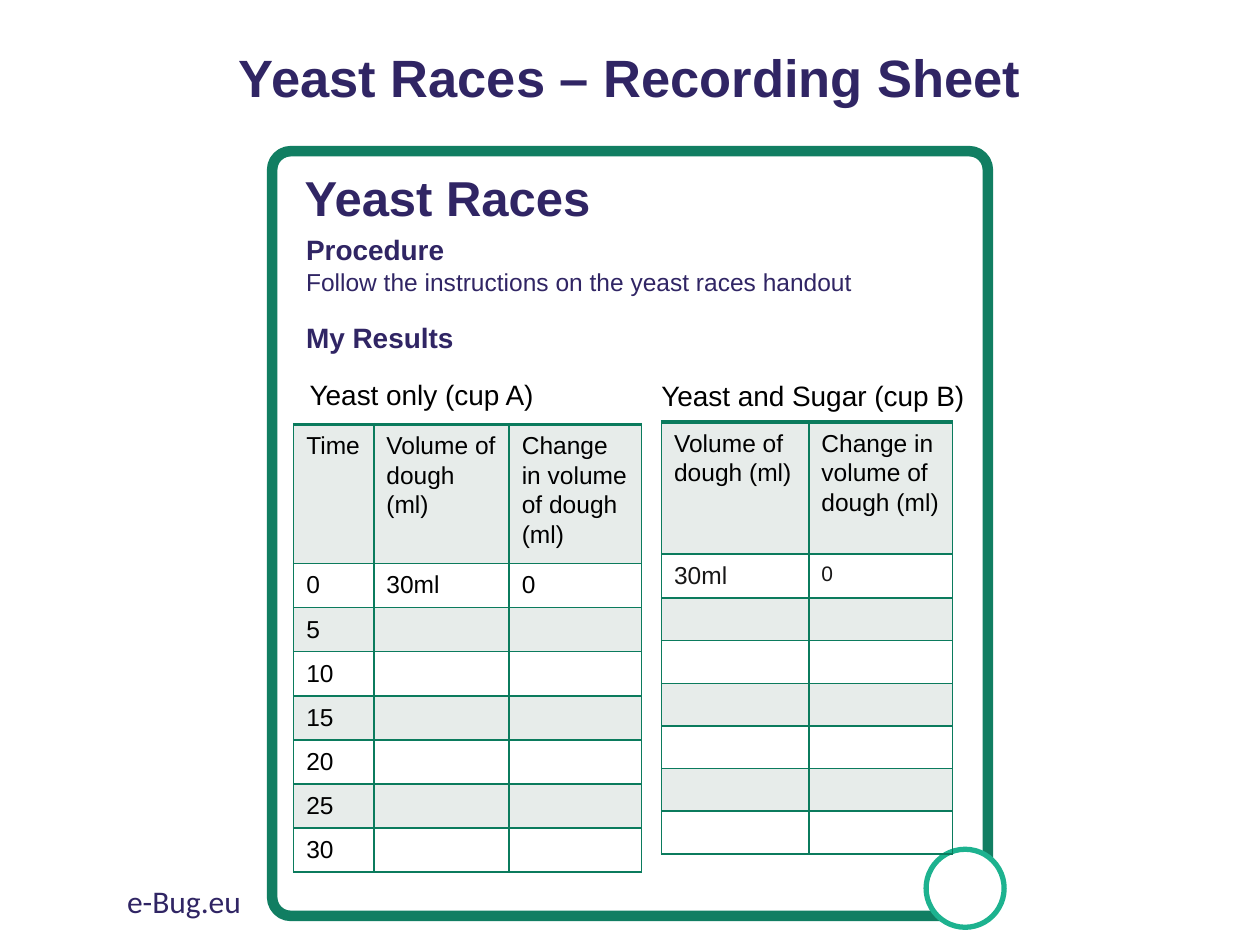
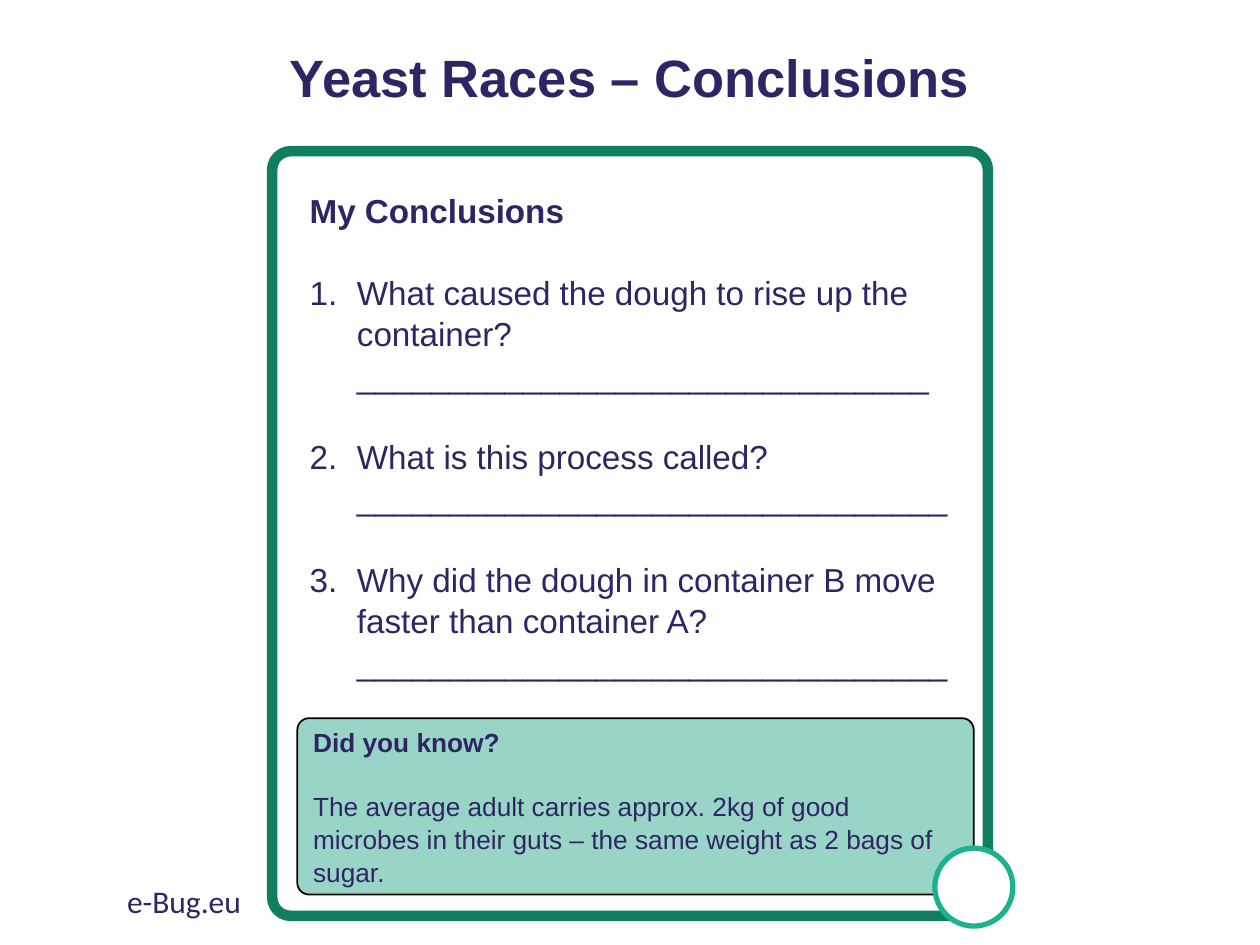
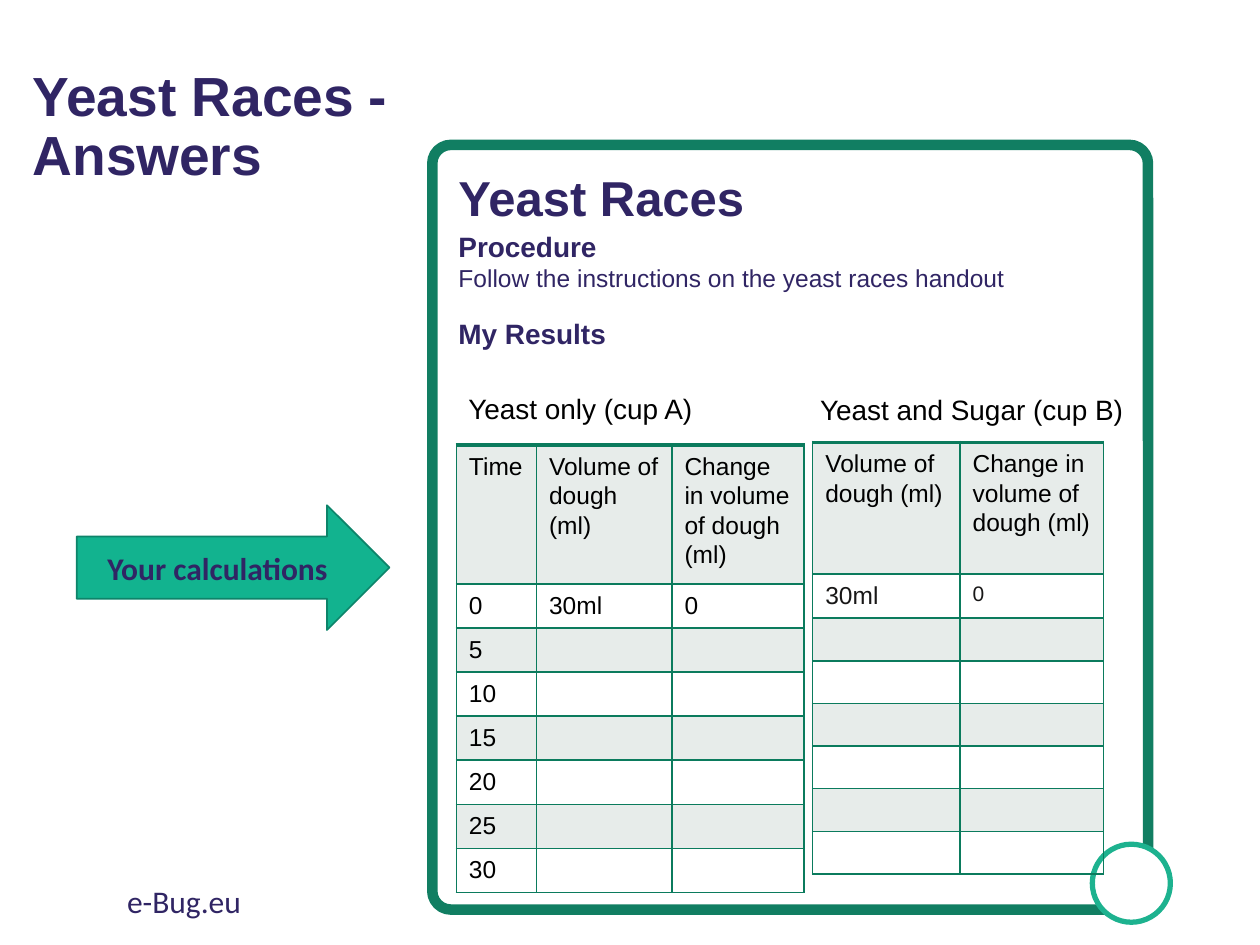
from copy import deepcopy

from lxml import etree
from pptx import Presentation
from pptx.dml.color import RGBColor
from pptx.enum.shapes import MSO_SHAPE as Preset
from pptx.enum.text import MSO_ANCHOR as Anchor, MSO_AUTO_SIZE as AutoSize, PP_ALIGN as Align
from pptx.oxml.ns import qn
from pptx.util import Pt

COLORS = {
    "ink": "302564", "black": "000000", "soft_black": "181717", "white": "FFFFFF",
    "frame": "117E62", "ring": "1DB28F", "grid": "0B7B5D", "band": "E7ECEA",
    "fact": "99D5C7", "arrow": "12B38F", "arrow_edge": "0D846A",
}

# Text styles: font values, then the colour name
STYLES = {
    "title": ({"name": "Arial", "size": Pt(30), "bold": True}, "ink"),
    "answer_title": ({"name": "Arial", "size": Pt(31.5), "bold": True}, "ink"),
    "heading": ({"name": "Arial", "size": Pt(28), "bold": True}, "ink"),
    "subheading": ({"name": "Arial", "size": Pt(16), "bold": True}, "ink"),
    "body": ({"name": "Arial", "size": Pt(14), "bold": False}, "ink"),
    "label": ({"name": "Arial", "size": Pt(16), "bold": False}, "black"),
    "cell": ({"name": "Arial", "size": Pt(14), "bold": False}, "black"),
    "soft_cell": ({"name": "Arial", "size": Pt(14), "bold": False}, "soft_black"),
    "small_cell": ({"name": "Arial", "size": Pt(12), "bold": False}, "soft_black"),
    "question_head": ({"name": "Arial", "size": Pt(19), "bold": True}, "ink"),
    "question": ({"name": "Arial", "size": Pt(19), "bold": False}, "ink"),
    "fact_head": ({"name": "Arial", "size": Pt(15), "bold": True}, "ink"),
    "fact": ({"name": "Arial", "size": Pt(15), "bold": False}, "ink"),
    "footer": ({"name": "Calibri", "size": Pt(18), "bold": False}, "ink"),
    "arrow": ({"name": "Calibri", "size": Pt(18), "bold": True}, "ink"),
}

TITLE_BOX = (23, 0, 674, 92)
CONTENT_LEFT, CONTENT_WIDTH = 169.9, 386.6

# Places of the parts of the two recording sheets
RECORDING = {
    "frame": (155.5, 86.4), "ring": (529.2, 485.3),
    "heading": (167, 92.2), "procedure": (167.8, 129.6),
    "label_a": (169.9, 211), "table_a": (167.8, 242.6),
    "label_b": (370.8, 211.7), "table_b": (378, 241.2),
}
ANSWERS = {
    "frame": (247, 82.8), "ring": (624.2, 482.4),
    "heading": (254.9, 92.2), "procedure": (254.9, 127.4),
    "label_a": (260.6, 218.9), "table_a": (260.8, 254.2),
    "label_b": (461.5, 219.6), "table_b": (464.4, 252.7),
}

VOLUME, CHANGE = "Volume of dough (ml)", "Change in volume of dough (ml)"
YEAST_ROWS = [["Time", VOLUME, CHANGE], ["0", "30ml", "0"]]
YEAST_ROWS += [[str(minutes), "", ""] for minutes in range(5, 31, 5)]
SUGAR_ROWS = [[VOLUME, CHANGE], ["30ml", "0"]] + [["", ""]] * 6

QUESTIONS = [
    ("What caused the dough to rise up the container?", 31),
    ("What is this process called?", 32),
    ("Why did the dough in container B move\vfaster than container A?", 32),
]


def rgb(name):
    return RGBColor.from_string(COLORS[name])


def set_attributes(target, values):
    for name, value in values.items():
        setattr(target, name, value)


def write_paragraph(paragraph, text, style, **layout):
    """Fill one paragraph; layout holds paragraph values such as alignment."""
    paragraph.text = text
    set_attributes(paragraph, layout)
    values, color = STYLES[style]
    for run in paragraph.runs:
        set_attributes(run.font, values)
        run.font.color.rgb = rgb(color)
    for line_break in paragraph._p.findall(qn("a:br")):
        line_break.insert(0, deepcopy(paragraph.runs[0]._r.rPr))


def write_paragraphs(frame, entries, **shared):
    """Write (text, style, layout) entries and return the paragraphs."""
    frame.word_wrap = True
    for index, (text, style, layout) in enumerate(entries):
        paragraph = frame.add_paragraph() if index else frame.paragraphs[0]
        write_paragraph(paragraph, text, style, **{**shared, **layout})
    return frame.paragraphs


def add_title(slide, text, box=TITLE_BOX, style="title", alignment=Align.CENTER):
    title = slide.shapes.title
    set_attributes(title, dict(zip(("left", "top", "width", "height"), map(Pt, box))))
    set_attributes(title.text_frame, {"auto_size": AutoSize.NONE, "word_wrap": True,
                                      "vertical_anchor": Anchor.MIDDLE})
    write_paragraph(title.text_frame.paragraphs[0], text, style,
                    alignment=alignment, line_spacing=0.9)


def add_text(slide, place, size, entries, **shared):
    box = slide.shapes.add_textbox(*map(Pt, (*place, *size)))
    write_paragraphs(box.text_frame, entries, **shared)


def add_preset(slide, preset, box, fill=None, line=None, line_width=1, corner=None):
    shape = slide.shapes.add_shape(preset, *map(Pt, box))
    shape.shadow.inherit = False
    if corner is not None:
        shape.adjustments[0] = corner
    if fill:
        shape.fill.solid()
        shape.fill.fore_color.rgb = rgb(fill)
    else:
        shape.fill.background()
    if line:
        shape.line.color.rgb = rgb(line)
        shape.line.width = Pt(line_width)
    else:
        shape.line.fill.background()
    return shape


def add_frame(slide, place):
    add_preset(slide, Preset.ROUNDED_RECTANGLE, (*place, 409, 437),
               line="frame", line_width=6, corner=0.026)


def add_ring(slide, place):
    add_preset(slide, Preset.OVAL, (*place, 44.6, 44.6), "white", "ring", 3)


def add_footer(slide):
    add_text(slide, (65.5, 500.4), (243, 29), [("e-Bug.eu", "footer", {})])


def set_borders(cell, is_header):
    properties = cell._tc.get_or_add_tcPr()
    for side in "LRTB":
        width = Pt(2.25 if is_header and side == "T" else 1)
        border = etree.SubElement(properties, qn(f"a:ln{side}"), w=str(width))
        fill = etree.SubElement(border, qn("a:solidFill"))
        etree.SubElement(fill, qn("a:srgbClr"), val=COLORS["grid"])


def add_results_table(slide, place, rows, widths, heights, first_row_styles):
    table = slide.shapes.add_table(
        len(rows), len(widths), *map(Pt, (*place, sum(widths), sum(heights)))).table
    set_attributes(table, {"first_row": False, "horz_banding": False})
    for column, width in zip(table.columns, widths):
        column.width = Pt(width)
    for row_index, (texts, height) in enumerate(zip(rows, heights)):
        table.rows[row_index].height = Pt(height)
        for column_index, text in enumerate(texts):
            cell = table.cell(row_index, column_index)
            set_borders(cell, row_index == 0)
            if row_index % 2 == 0:
                cell.fill.solid()
                cell.fill.fore_color.rgb = rgb("band")
            else:
                cell.fill.background()
            paragraph = cell.text_frame.paragraphs[0]
            if text:
                style = first_row_styles[column_index] if row_index == 1 else "cell"
                write_paragraph(paragraph, text, style, line_spacing=1.07)
            else:
                # An empty cell keeps a small text size so the row stays low
                etree.SubElement(paragraph._p, qn("a:endParaRPr"), sz="1200")


def add_recording_sheet(slide, places):
    add_frame(slide, places["frame"])
    add_ring(slide, places["ring"])
    add_text(slide, places["heading"], (342, 41), [("Yeast Races", "heading", {})])
    add_text(slide, places["procedure"], (342, 78), [
        ("Procedure", "subheading", {}),
        ("Follow the instructions on the yeast races handout", "body", {}),
        ("My Results", "subheading", {"space_before": Pt(14)}),
    ])
    # Cup A
    add_text(slide, places["label_a"], (175, 27),
             [("Yeast only (cup A)", "label", {})], line_spacing=1.07)
    add_results_table(slide, places["table_a"], YEAST_ROWS, (45.8, 77.4, 75.6),
                      [79.4] + [25.2] * 7, ["cell"] * 3)
    # Cup B
    add_text(slide, places["label_b"], (192, 27),
             [("Yeast and Sugar (cup B)", "label", {})], line_spacing=1.07)
    add_results_table(slide, places["table_b"], SUGAR_ROWS, (84.2, 82),
                      [75.4, 25.2] + [24.35] * 6, ["soft_cell", "small_cell"])


def add_number(paragraph, number):
    properties = paragraph._p.get_or_add_pPr()
    properties.set("marL", str(Pt(27)))
    properties.set("indent", str(-Pt(27)))
    etree.SubElement(properties, qn("a:buFont"), typeface="+mj-lt")
    etree.SubElement(properties, qn("a:buAutoNum"), type="arabicPeriod", startAt=str(number))


def add_questions(slide):
    panel = add_preset(slide, Preset.RECTANGLE,
                       (CONTENT_LEFT, 104.4, CONTENT_WIDTH, 293.8), "white")
    panel.text_frame.vertical_anchor = Anchor.TOP
    entries = [("My Conclusions", "question_head", {})]
    entries += [(f"{question}\v{'_' * length}", "question", {"space_before": Pt(22.8)})
                for question, length in QUESTIONS]
    paragraphs = write_paragraphs(panel.text_frame, entries,
                                  alignment=Align.LEFT, line_spacing=1.045)
    for number, paragraph in enumerate(paragraphs[1:], 1):
        add_number(paragraph, number)


def add_fact(slide):
    panel = add_preset(slide, Preset.ROUNDED_RECTANGLE,
                       (CONTENT_LEFT, 410.4, CONTENT_WIDTH, 100.8),
                       "fact", "black", corner=0.067)
    panel.text_frame.vertical_anchor = Anchor.MIDDLE
    write_paragraphs(panel.text_frame, [
        ("Did you know?", "fact_head", {}),
        ("The average adult carries approx. 2kg of good microbes in their guts"
         " – the same weight as 2 bags of sugar.", "fact", {"space_before": Pt(18)}),
    ], alignment=Align.LEFT, line_spacing=1.045)


def add_arrow(slide):
    arrow = add_preset(slide, Preset.RIGHT_ARROW, (43.9, 288.7, 178.6, 71.3),
                       "arrow", "arrow_edge")
    arrow.text_frame.vertical_anchor = Anchor.MIDDLE
    write_paragraphs(arrow.text_frame, [("Your calculations", "arrow", {})],
                     alignment=Align.CENTER)


def main():
    presentation = Presentation()
    set_attributes(presentation, {"slide_width": Pt(720), "slide_height": Pt(540)})
    title_only = presentation.slide_layouts[5]
    recording, conclusions, answers = (
        presentation.slides.add_slide(title_only) for _ in range(3))

    # Recording sheet
    add_title(recording, "Yeast Races – Recording Sheet")
    add_recording_sheet(recording, RECORDING)
    add_footer(recording)

    # Conclusions
    add_title(conclusions, "Yeast Races – Conclusions")
    add_frame(conclusions, RECORDING["frame"])
    add_questions(conclusions)
    add_fact(conclusions)
    add_footer(conclusions)
    add_ring(conclusions, (534.2, 484.6))

    # Answers
    add_title(answers, "Yeast Races - Answers", (11.5, 41.8, 290, 62.6),
              "answer_title", Align.LEFT)
    add_recording_sheet(answers, ANSWERS)
    add_arrow(answers)
    add_footer(answers)

    presentation.save("out.pptx")


if __name__ == "__main__":
    main()
